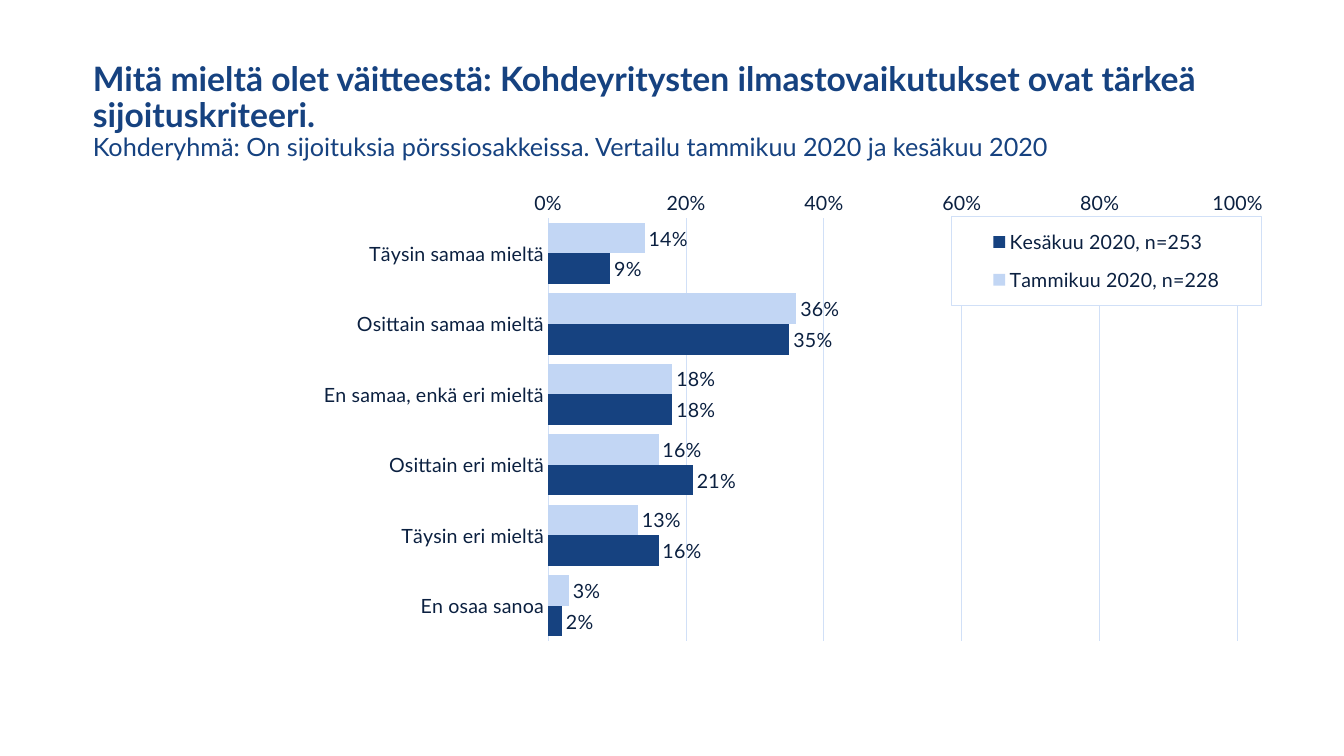
"""Build a survey slide comparing January and June 2020 answers."""
from lxml import etree
from pptx import Presentation
from pptx import util as u
from pptx.chart import data as cd
from pptx.dml import color as col
from pptx.enum import chart as ch, text as tx
from pptx.oxml import ns

NAVY, INK, PALE, GRID = "164280", "0B2040", "C2D6F4", "D1E0F7"
ANSWERS = ["Täysin samaa mieltä", "Osittain samaa mieltä",
           "En samaa, enkä eri mieltä", "Osittain eri mieltä",
           "Täysin eri mieltä", "En osaa sanoa"]
WAVES = [("Tammikuu 2020, n=228", PALE, (0.14, 0.36, 0.18, 0.16, 0.13, 0.03)),
         ("Kesäkuu 2020, n=253", NAVY, (0.09, 0.35, 0.18, 0.21, 0.16, 0.02))]


def rgb(code):
    return col.RGBColor.from_string(code)


def put(item, form):
    for key, val in form.items():
        setattr(item, key, val)


class Deck:
    face = "Lato"

    def __init__(self):
        self.prs = Presentation()
        put(self.prs, {"slide_width": u.Inches(13.33), "slide_height": u.Inches(7.5)})
        self.page = self.prs.slides.add_slide(self.prs.slide_layouts[5])

    def font(self, font, size, code, bold=False):
        put(font, {"name": self.face, "size": u.Pt(size), "bold": bold})
        font.color.rgb = rgb(code)

    def box(self, left, top, width, height):
        return dict(zip(("left", "top", "width", "height"),
                        map(u.Inches, (left, top, width, height))))

    def title(self, head, sub, *place):
        shape = self.page.shapes.title
        put(shape, self.box(*place))
        frame = shape.text_frame
        put(frame, {"word_wrap": True, "auto_size": tx.MSO_AUTO_SIZE.NONE,
                    "vertical_anchor": tx.MSO_ANCHOR.MIDDLE})
        para = frame.paragraphs[0]
        put(para, {"alignment": tx.PP_ALIGN.LEFT, "line_spacing": 0.9})
        for words, size, bold in ((head, 24, True), (sub, 18, False)):
            run = para.add_run()
            run.text = words
            self.font(run.font, size, NAVY, bold)
            if bold:
                para.add_line_break()

    def line(self, form):
        form.line.color.rgb = rgb(GRID)
        form.line.width = u.Pt(0.75)

    def layout(self, part, spots, inner=False):
        for old in part.findall(ns.qn("c:layout")):
            part.remove(old)
        lay = etree.Element(ns.qn("c:layout"))
        man = etree.SubElement(lay, ns.qn("c:manualLayout"))
        tags = [("layoutTarget", "inner")] if inner else []
        tags += [("xMode", "edge"), ("yMode", "edge"), *zip("xywh", spots)]
        for tag, val in tags:
            etree.SubElement(man, ns.qn("c:" + tag)).set("val", str(val))
        part.insert(0 if inner else 1, lay)

    def bars(self, *place):
        data = cd.CategoryChartData(number_format="0%")
        data.categories = ANSWERS
        for name, _, vals in WAVES:
            data.add_series(name, vals)
        chart = self.page.shapes.add_chart(
            ch.XL_CHART_TYPE.BAR_CLUSTERED, chart_data=data,
            **dict(zip(("x", "y", "cx", "cy"), self.box(*place).values()))).chart
        chart.has_title = False
        self.font(chart.font, 14, INK)
        plot = chart.plots[0]
        put(plot, {"gap_width": 30, "overlap": 0, "vary_by_categories": False})
        for bar, (_, code, _) in zip(plot.series, WAVES):
            bar.format.fill.solid()
            bar.format.fill.fore_color.rgb = rgb(code)
            put(bar.data_labels, {"show_value": True, "number_format": "0%",
                                  "number_format_is_linked": False,
                                  "position": ch.XL_LABEL_POSITION.OUTSIDE_END})
            self.font(bar.data_labels.font, 14, INK)
        self.layout(chart._chartSpace.chart.plotArea, (0.391, 0.063, 0.579, 0.813), True)
        self.axes(chart)
        self.legend(chart)

    def axes(self, chart):
        cat, val = chart.category_axis, chart.value_axis
        for axis in (cat, val):
            put(axis, {"major_tick_mark": ch.XL_TICK_MARK.NONE,
                       "minor_tick_mark": ch.XL_TICK_MARK.NONE})
            self.font(axis.tick_labels.font, 14, INK)
        cat.reverse_order = True
        self.line(cat.format)
        put(val, {"minimum_scale": 0, "maximum_scale": 1, "major_unit": 0.2,
                  "has_major_gridlines": True})
        put(val.tick_labels, {"number_format": "0%", "number_format_is_linked": False})
        val.format.line.fill.background()
        self.line(val.major_gridlines.format)

    def legend(self, chart):
        chart.has_legend = True
        key = chart.legend
        put(key, {"position": ch.XL_LEGEND_POSITION.BOTTOM, "include_in_layout": True})
        self.font(key.font, 14, INK)
        part = key._element
        self.layout(part, (0.73, 0.06, 0.26, 0.17))
        look = etree.Element(ns.qn("c:spPr"))
        fill = etree.SubElement(look, ns.qn("a:solidFill"))
        edge = etree.SubElement(look, ns.qn("a:ln"), w=str(u.Pt(0.75)))
        rim = etree.SubElement(edge, ns.qn("a:solidFill"))
        for node, code in ((fill, "FFFFFF"), (rim, GRID)):
            etree.SubElement(node, ns.qn("a:srgbClr"), val=code)
        part.find(ns.qn("c:txPr")).addprevious(look)


def main():
    deck = Deck()
    deck.title("Mitä mieltä olet väitteestä: Kohdeyritysten ilmastovaikutukset "
               "ovat tärkeä sijoituskriteeri. ",
               "Kohderyhmä: On sijoituksia pörssiosakkeissa. "
               "Vertailu tammikuu 2020 ja kesäkuu 2020", 0.82, 0.39, 12.11, 1.45)
    deck.bars(0.82, 1.84, 11.81, 5.16)
    deck.prs.save("out.pptx")


if __name__ == "__main__":
    main()
